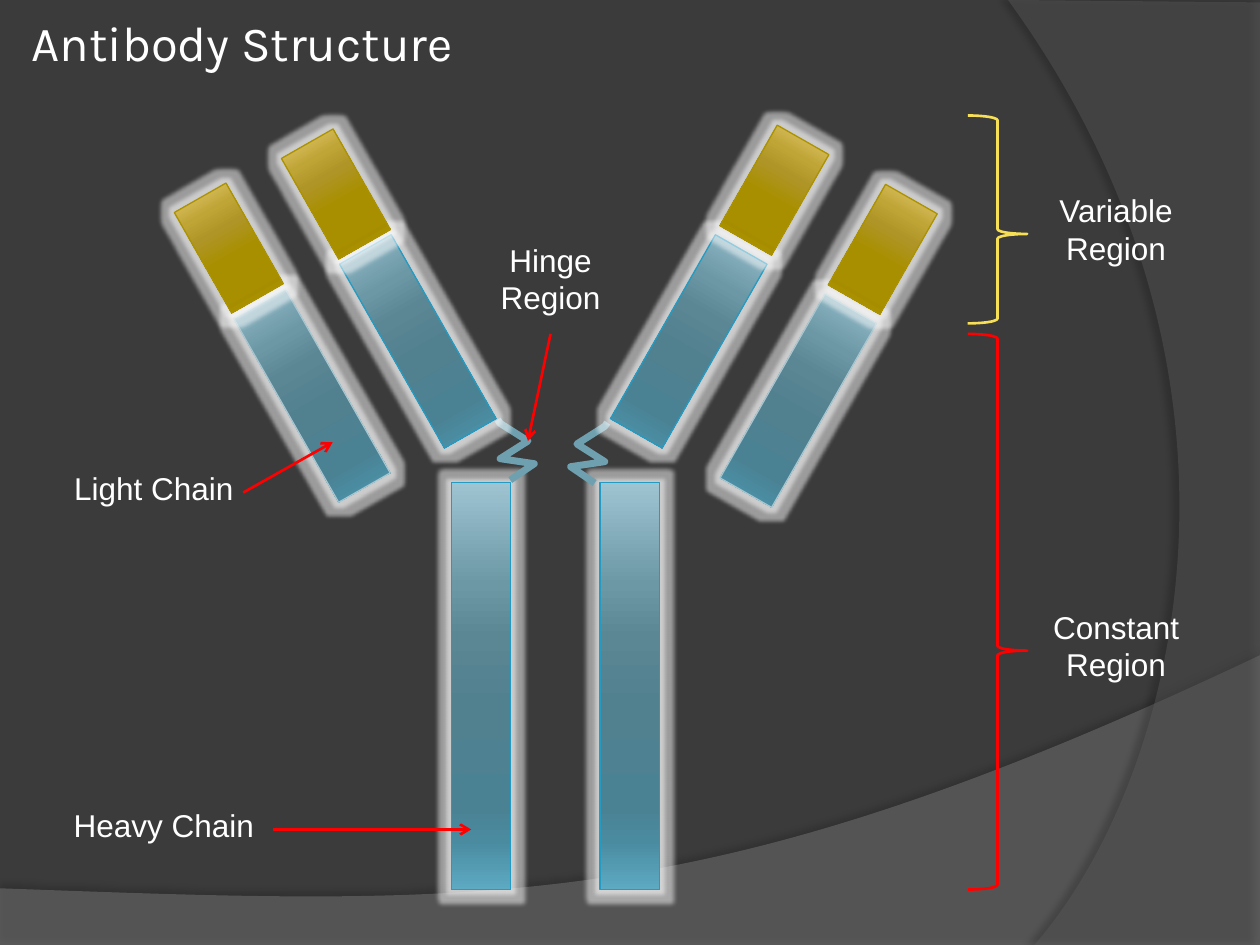
from dataclasses import dataclass

from lxml import etree
from pptx import Presentation
from pptx import util as u
from pptx.dml import color
from pptx.enum import shapes, text
from pptx.oxml import ns

COLORS = {
    "backdrop": "3B3B3B", "lower_wave": "7F7F7F", "side_wave": "5E5E5E",
    "shadow": "000000", "white": "FFFFFF", "pointer": "FF0000",
    "variable": "F7DF56", "hinge": "6EA0B0", "heavy_edge": "239BC2",
    "light_edge": "A8C6D0", "tip_edge": "AB9200",
}
STOPS = (0, 25, 38, 55, 80, 88, 100)
GRADIENTS = {
    "chain": ("9EC4D2", "6C97A5", "5B8694", "51808F", "4A8294", "4A8BA0", "5DAAC2"),
    "tip": ("EED27E", "BFA536", "AF9527", "A88F00", "A68D00", "AF9500", "E6C100"),
}
CHAIN_WIDTH, STEM_LENGTH, ARM_LENGTH, TIP_LENGTH = 34, 232.6, 121, 66.2
TILT = 29.7
MIRROR_SUM, HINGE_DROP = 631.4, 1.7
Point = tuple[float, float]


@dataclass
class Domain:
    left: float
    top: float
    length: float
    tilt: float
    gradient: str
    edge: str


@dataclass
class Label:
    wording: str
    left: float
    top: float
    width: float
    height: float


@dataclass
class Brace:
    top: float
    height: float
    color: str


@dataclass
class Wave:
    outline: list[Point]
    controls: tuple[Point, Point]
    end: Point
    color: str
    opacity: int
    shadow: tuple[int, float, float, int]


STEMS = [Domain(left, 275.8, STEM_LENGTH, 0, "chain", "heavy_edge") for left in (257.8, 342.9)]
ARMS = [
    Domain(221.8, 134.6, ARM_LENGTH, -TILT, "chain", "heavy_edge"),
    Domain(376.6, 134.6, ARM_LENGTH, TILT, "chain", "heavy_edge"),
    Domain(175, 77.8, TIP_LENGTH, -TILT, "tip", "tip_edge"),
    Domain(425.5, 75.6, TIP_LENGTH, TILT, "tip", "tip_edge"),
    Domain(161.3, 165.6, ARM_LENGTH, -TILT, "chain", "light_edge"),
    Domain(113.8, 108.7, TIP_LENGTH, -TILT, "tip", "tip_edge"),
    Domain(439.2, 168.5, ARM_LENGTH, TILT, "chain", "light_edge"),
    Domain(487.4, 109.4, TIP_LENGTH, TILT, "tip", "tip_edge"),
]
LEFT_HINGE = [(291.6, 274.3), (305.3, 265), (285.8, 262.1),
              (301.7, 252), (285.8, 241.9), (284.4, 239.8)]
RIGHT_HINGE = [(MIRROR_SUM - x, y + HINGE_DROP) for x, y in LEFT_HINGE]
LABELS = [
    Label("Heavy Chain", -2.9, 457.2, 193, 29),
    Label("Hinge Region", 263.5, 133.9, 102.2, 51),
    Label("Light Chain", -8.6, 264.5, 193, 29),
    Label("Constant Region", 581.3, 343.7, 113, 51),
    Label("Variable Region", 581.3, 105.8, 113, 51),
]
POINTERS = [
    ((156.2, 474), (269.3, 474)),
    ((314.6, 190.8), (301.7, 252)),
    ((139, 281.5), (190.1, 252.7)),
]
BRACES = [Brace(190.8, 317.5, "pointer"), Brace(66, 118.8, "variable")]
WAVES = [
    Wave([(0, 507.6), (0, 540.7), (720, 540.7), (720, 374.4)],
         ((402.5, 524.9), (281.5, 517.7)), (0, 507.6), "lower_wave", 45, (35, 4, 3.5, 270)),
    Wave([(720, 1.4), (720, 540), (591.1, 540)],
         ((673.2, 445.7), (733, 216)), (576, 0), "side_wave", 40, (45, 4, 4, 180)),
]


def rgb(name: str) -> color.RGBColor:
    return color.RGBColor.from_string(COLORS[name])


def apply(target, values: dict) -> None:
    for name, value in values.items():
        setattr(target, name, value)


def add_node(parent, tag: str, **attributes):
    return etree.SubElement(parent, ns.qn(f"a:{tag}"),
                            {name: str(value) for name, value in attributes.items()})


def add_effect(shape, tag: str, hue: str, opacity: int, **attributes) -> None:
    effects = shape.element.spPr.find(ns.qn("a:effectLst"))
    tone = add_node(add_node(effects, tag, **attributes), "srgbClr", val=COLORS[hue])
    add_node(tone, "alpha", val=opacity * 1000)


def set_line(shape, hue: str, width: float) -> None:
    shape.line.color.rgb = rgb(hue)
    shape.line.width = u.Pt(width)


def add_path(slide, points: list[Point], close: bool):
    builder = slide.shapes.build_freeform(u.Pt(points[0][0]), u.Pt(points[0][1]))
    builder.add_line_segments([(u.Pt(x), u.Pt(y)) for x, y in points[1:]], close=close)
    path = builder.convert_to_shape()
    path.shadow.inherit = False
    return path


def bend_last_segment(area, wave: Wave) -> None:
    segment = area.element.spPr.findall(".//" + ns.qn("a:lnTo"))[len(wave.outline) - 1]
    bend = etree.Element(ns.qn("a:cubicBezTo"))
    for x, y in (*wave.controls, wave.end):
        add_node(bend, "pt", x=u.Pt(x) - area.left, y=u.Pt(y) - area.top)
    segment.getparent().replace(segment, bend)


def draw_wave(slide, wave: Wave) -> None:
    area = add_path(slide, [*wave.outline, wave.end], True)
    bend_last_segment(area, wave)
    area.fill.solid()
    area.fill.fore_color.rgb = rgb(wave.color)
    tone = area.element.spPr.find(ns.qn("a:solidFill"))[0]
    add_node(tone, "alpha", val=wave.opacity * 1000)
    area.line.fill.background()
    opacity, blur, distance, angle = wave.shadow
    add_effect(area, "outerShdw", "shadow", opacity, blurRad=u.Pt(blur),
               dist=u.Pt(distance), dir=angle * 60000)


def draw_hinge(slide, points: list[Point]) -> None:
    spring = add_path(slide, points, False)
    spring.fill.background()
    set_line(spring, "hinge", 4)


def draw_domain(slide, domain: Domain) -> None:
    block = slide.shapes.add_shape(
        shapes.MSO_SHAPE.RECTANGLE, u.Pt(domain.left), u.Pt(domain.top),
        u.Pt(CHAIN_WIDTH), u.Pt(domain.length))
    block.rotation = domain.tilt
    block.shadow.inherit = False
    block.fill.gradient()
    block.fill.gradient_angle = 270
    stops = block.element.spPr.find(".//" + ns.qn("a:gsLst"))
    stops.clear()
    for position, hue in zip(STOPS, GRADIENTS[domain.gradient]):
        add_node(add_node(stops, "gs", pos=position * 1000), "srgbClr", val=hue)
    set_line(block, domain.edge, 0.75)
    add_effect(block, "glow", "white", 50, rad=u.Pt(5))


def draw_label(slide, label: Label, font: str = "Arial", size: float = 18,
               align=text.PP_ALIGN.CENTER, frame_format: dict | None = None) -> None:
    box = slide.shapes.add_textbox(u.Pt(label.left), u.Pt(label.top),
                                   u.Pt(label.width), u.Pt(label.height))
    apply(box.text_frame, {"word_wrap": True, **(frame_format or {})})
    paragraph = box.text_frame.paragraphs[0]
    paragraph.alignment = align
    wording = paragraph.add_run()
    wording.text = label.wording
    apply(wording.font, {"name": font, "size": u.Pt(size)})
    wording.font.color.rgb = rgb("white")


def draw_pointer(slide, start: Point, end: Point) -> None:
    arrow = slide.shapes.add_connector(shapes.MSO_CONNECTOR.STRAIGHT,
                                       *(u.Pt(value) for value in start + end))
    set_line(arrow, "pointer", 1.5)
    add_node(arrow.element.spPr.find(ns.qn("a:ln")), "tailEnd", type="arrow")
    add_node(arrow.element.spPr, "effectLst")


def draw_brace(slide, brace: Brace) -> None:
    bracket = slide.shapes.add_shape(shapes.MSO_SHAPE.RIGHT_BRACE, u.Pt(553), u.Pt(brace.top),
                                     u.Pt(CHAIN_WIDTH), u.Pt(brace.height))
    bracket.adjustments[0], bracket.adjustments[1] = 0.08, 0.57
    bracket.shadow.inherit = False
    bracket.fill.background()
    set_line(bracket, brace.color, 1.5)


def main() -> None:
    deck = Presentation()
    apply(deck, {"slide_width": u.Pt(720), "slide_height": u.Pt(540)})
    slide = deck.slides.add_slide(deck.slide_layouts[6])
    slide.background.fill.solid()
    slide.background.fill.fore_color.rgb = rgb("backdrop")
    for wave in WAVES:
        draw_wave(slide, wave)
    margins = {f"margin_{side}": u.Pt(3.6) for side in ("left", "top", "right", "bottom")}
    draw_label(slide, Label("Antibody Structure", 14.4, -6.5, 680.4, 61.2), "Karla", 28,
               text.PP_ALIGN.LEFT, {"vertical_anchor": text.MSO_ANCHOR.MIDDLE, **margins})
    for stem in STEMS:
        draw_domain(slide, stem)
    for points in (LEFT_HINGE, RIGHT_HINGE):
        draw_hinge(slide, points)
    for arm in ARMS:
        draw_domain(slide, arm)
    for label in LABELS:
        draw_label(slide, label)
    for start, end in POINTERS:
        draw_pointer(slide, start, end)
    for brace in BRACES:
        draw_brace(slide, brace)
    deck.save("out.pptx")


if __name__ == "__main__":
    main()
